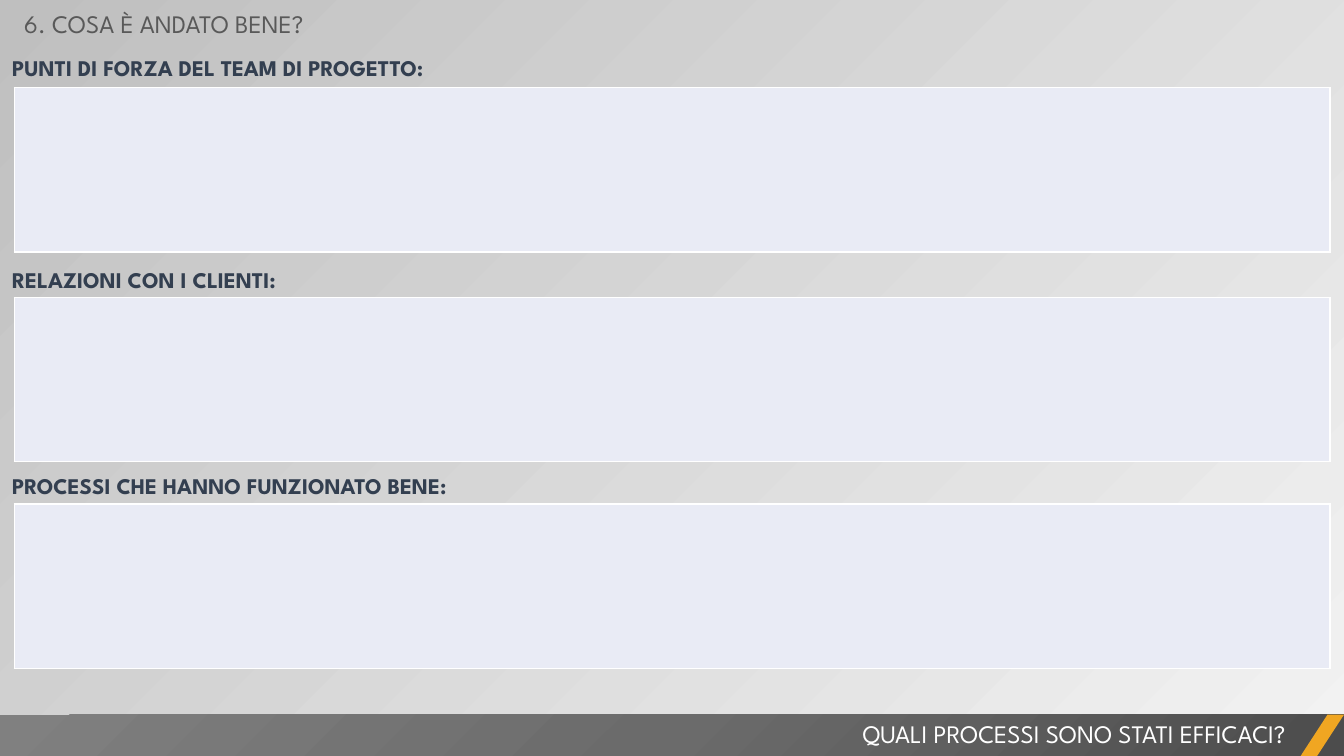
from lxml import etree
from pptx import Presentation
from pptx.dml.color import RGBColor
from pptx.enum.shapes import MSO_SHAPE
from pptx.enum.text import MSO_ANCHOR, MSO_AUTO_SIZE, PP_ALIGN
from pptx.oxml import parse_xml
from pptx.oxml.ns import qn
from pptx.util import Inches, Pt

RECTANGLE = MSO_SHAPE.RECTANGLE
PARALLELOGRAM = MSO_SHAPE.PARALLELOGRAM
TOP = MSO_ANCHOR.TOP
GROW = MSO_AUTO_SIZE.SHAPE_TO_FIT_TEXT
LEFT = PP_ALIGN.LEFT
RIGHT = PP_ALIGN.RIGHT
TITLE_ONLY = 5

FOOTER_GRADIENT = """
<a:gradFill xmlns:a="http://schemas.openxmlformats.org/drawingml/2006/main" rotWithShape="1">
  <a:gsLst>
    <a:gs pos="0"><a:srgbClr val="4C4C4C"/></a:gs>
    <a:gs pos="50000"><a:srgbClr val="6B6B6B"/></a:gs>
    <a:gs pos="100000"><a:srgbClr val="808080"/></a:gs>
  </a:gsLst>
  <a:path path="circle"><a:fillToRect l="100000" t="100000"/></a:path>
</a:gradFill>"""


def color(hex_value):
    return RGBColor.from_string(hex_value)


class ReviewSlide:
    font_name = "League Spartan"
    heading_color = "333F50"
    answer_color = "E9EBF5"
    border_color = "FFFFFF"

    def __init__(self, presentation):
        self.slide = presentation.slides.add_slide(presentation.slide_layouts[TITLE_ONLY])
        self.shapes = self.slide.shapes

    def background(self, start, end):
        fill = self.slide.background.fill
        fill.gradient()
        fill.gradient_angle = 135
        for stop, position, shade in zip(fill.gradient_stops, (0, 1), (start, end)):
            stop.position = position
            stop.color.rgb = color(shade)

    def set_text(self, shape, text, size, text_color, bold=False, align=LEFT):
        frame = shape.text_frame
        frame.text = text
        frame.word_wrap = True
        frame.auto_size = GROW
        frame.vertical_anchor = TOP
        paragraph = frame.paragraphs[0]
        paragraph.alignment = align
        font = paragraph.font
        font.name = self.font_name
        font.size = Pt(size)
        font.bold = bold
        font.color.rgb = color(text_color)
        return frame

    def title(self, text, left, top, width, height):
        heading = self.shapes.title
        heading.left, heading.top = Inches(left), Inches(top)
        heading.width, heading.height = Inches(width), Inches(height)
        self.set_text(heading, text, 18, "595959")

    def text(self, text, left, top, width, height, size, text_color, **style):
        box = self.shapes.add_textbox(Inches(left), Inches(top), Inches(width), Inches(height))
        return self.set_text(box, text, size, text_color, **style)

    def label(self, text, top, line_spacing):
        frame = self.text(text, 0, top, 7.63, 0.4, 16, self.heading_color, bold=True)
        frame.margin_left = frame.margin_right = Inches(0.12)
        frame.margin_top = frame.margin_bottom = Inches(0.06)
        frame.paragraphs[0].line_spacing = line_spacing
        frame.paragraphs[0].space_before = Pt(3.2)

    def answer(self, top):
        table = self.shapes.add_table(
            1, 1, Inches(0.14), Inches(top), Inches(13.05), Inches(1.63)
        ).table
        table.first_row = table.horz_banding = False
        cell = table.cell(0, 0)
        properties = cell._tc.get_or_add_tcPr()
        for side in ("lnL", "lnR", "lnT", "lnB"):
            border = etree.SubElement(properties, qn(f"a:{side}"), w=str(Pt(1)))
            solid = etree.SubElement(border, qn("a:solidFill"))
            etree.SubElement(solid, qn("a:srgbClr"), val=self.border_color)
        cell.fill.solid()
        cell.fill.fore_color.rgb = color(self.answer_color)

    def block(self, kind, left, top, width, height, fill):
        shape = self.shapes.add_shape(
            kind, Inches(left), Inches(top), Inches(width), Inches(height)
        )
        shape.shadow.inherit = False
        shape.fill.solid()
        shape.fill.fore_color.rgb = color(fill)
        shape.line.fill.background()
        return shape

    def footer(self, question):
        band = self.block(RECTANGLE, 0, 7.09, 13.33, 0.41, "6B6B6B")
        properties = band._element.spPr
        properties.replace(properties.find(qn("a:solidFill")), parse_xml(FOOTER_GRADIENT))
        self.text(question, 5.25, 7.08, 7.6, 0.4, 18, "FFFFFF", align=RIGHT)
        accent = self.block(PARALLELOGRAM, 12.9, 7.09, 0.43, 0.41, "F0A622")
        accent.adjustments[0] = 0.65


def main():
    presentation = Presentation()
    presentation.slide_width = Inches(13.33)
    presentation.slide_height = Inches(7.5)

    review = ReviewSlide(presentation)
    review.background("F2F2F2", "BFBFBF")
    review.title("6. COSA È ANDATO BENE?", 0.14, 0.03, 5.31, 0.4)

    sections = [
        ("PUNTI DI FORZA DEL TEAM DI PROGETTO:", 0.45, 0.87, Pt(21.5)),
        ("RELAZIONI CON I CLIENTI:", 2.55, 2.95, Pt(21.5)),
        ("PROCESSI CHE HANNO FUNZIONATO BENE:", 4.57, 5, 1.2),
    ]
    for heading, label_top, answer_top, line_spacing in sections:
        review.answer(answer_top)
        review.label(heading, label_top, line_spacing)

    review.footer("QUALI PROCESSI SONO STATI EFFICACI?")
    presentation.save("out.pptx")


if __name__ == "__main__":
    main()
